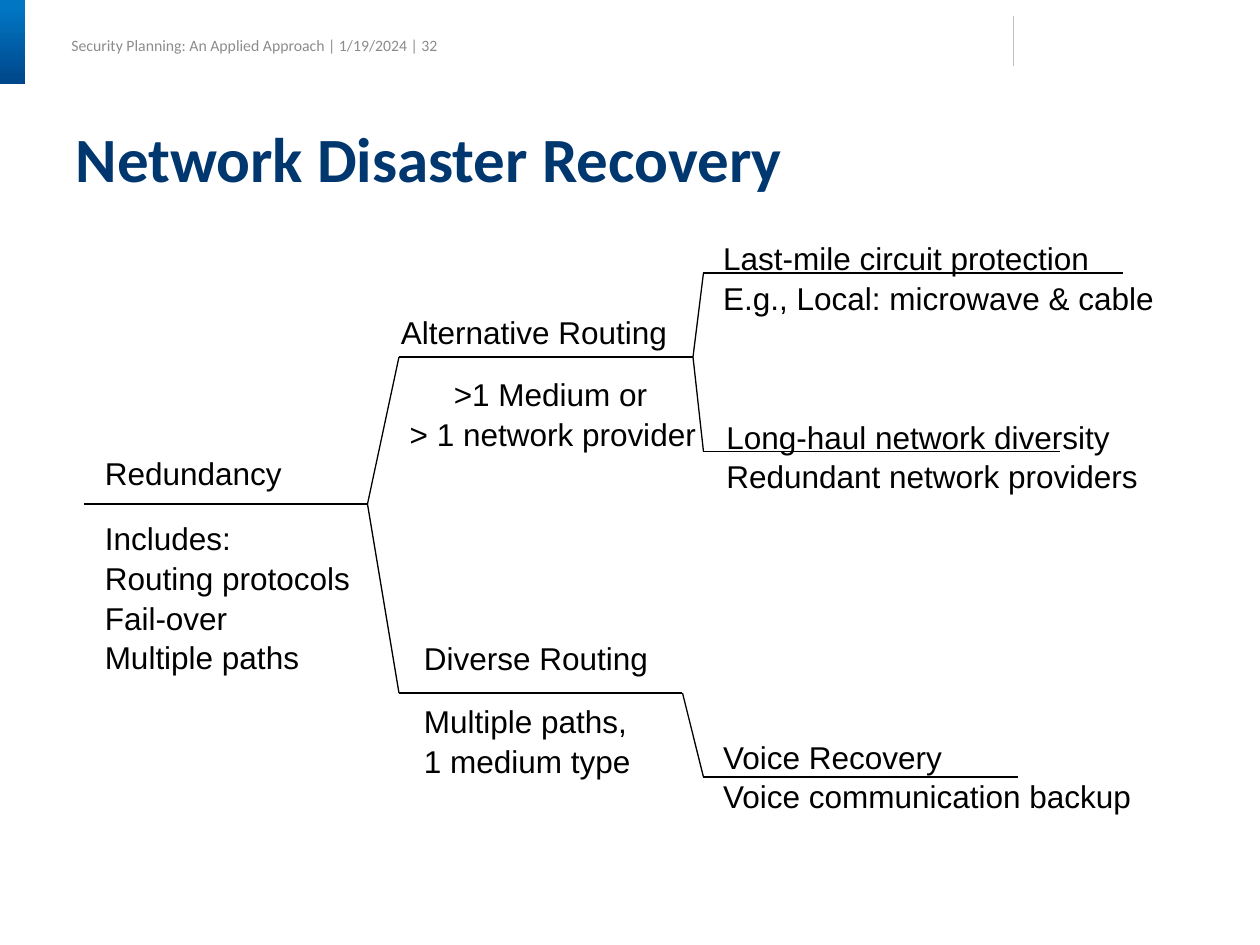
from dataclasses import dataclass

from lxml import etree
from pptx import Presentation
from pptx.dml.color import RGBColor
from pptx.enum.shapes import MSO_CONNECTOR, MSO_SHAPE
from pptx.enum.text import MSO_ANCHOR, PP_ALIGN
from pptx.oxml.ns import qn
from pptx.util import Inches, Pt

STRAIGHT = MSO_CONNECTOR.STRAIGHT
ROUNDED = MSO_SHAPE.ROUNDED_RECTANGLE
MIDDLE = MSO_ANCHOR.MIDDLE
LEFT = PP_ALIGN.LEFT

BLACK = RGBColor(0x00, 0x00, 0x00)
NAVY = RGBColor(0x00, 0x37, 0x6F)
GREY = RGBColor(0x8C, 0x8C, 0x8C)
RULE_GREY = RGBColor(0xBF, 0xBF, 0xBF)
ACCENT_LIGHT = RGBColor(0x01, 0x76, 0xC3)
ACCENT_DARK = RGBColor(0x00, 0x46, 0x8A)

COLUMNS, ROWS = 120, 90
TITLE_ONLY = 5


@dataclass
class Topic:
    heading: str
    details: list
    line: tuple
    box: tuple
    gap: float = 0
    indents: tuple = ()
    parent: str = ""


TOPICS = [
    Topic("Redundancy", ["Includes:", "Routing protocols", "Fail-over", "Multiple paths"],
          (8, 35, 48), (8.8, 42.5, 26, 21.8), gap=14.4),
    Topic("Alternative Routing", [">1 Medium or", "> 1 network provider"],
          (38, 66, 34), (37, 29, 31.5, 14.4), gap=13.2, indents=(0.42, 0.07),
          parent="Redundancy"),
    Topic("Diverse Routing", ["Multiple paths,", "1 medium type"],
          (38, 65, 66), (39.2, 60.1, 25.6, 14.4), gap=13.2, parent="Redundancy"),
    Topic("Last-mile circuit protection", ["E.g., Local: microwave & cable"],
          (67, 107, 26), (67.7, 22, 43.5, 8.4), parent="Alternative Routing"),
    Topic("Long-haul network diversity", ["Redundant network providers"],
          (67, 101, 43), (68, 39, 42.5, 8.4), parent="Alternative Routing"),
    Topic("Voice Recovery", ["Voice communication backup"],
          (67, 97, 74), (67.7, 69.5, 41.5, 8.4), parent="Diverse Routing"),
]


class TreeSlide:
    """Draws a titled topic tree on a grid of 120 columns by 90 rows."""

    def __init__(self, deck):
        self.column = deck.slide_width / COLUMNS
        self.row = deck.slide_height / ROWS
        self.slide = deck.slides.add_slide(deck.slide_layouts[TITLE_ONLY])
        self.shapes = self.slide.shapes

    def place(self, left, top, width, height):
        return (round(left * self.column), round(top * self.row),
                round(width * self.column), round(height * self.row))

    def style(self, paragraph, font, size, color, bold=False):
        paragraph.alignment = LEFT
        paragraph.font.name = font
        paragraph.font.size = Pt(size)
        paragraph.font.color.rgb = color
        paragraph.font.bold = bold

    def title(self, text, *box):
        title = self.shapes.title
        title.left, title.top, title.width, title.height = self.place(*box)
        title.text_frame.text = text
        title.text_frame.vertical_anchor = MIDDLE
        self.style(title.text_frame.paragraphs[0], "Calibri", 36, NAVY, bold=True)

    def header(self, text, *box):
        frame = self.shapes.add_textbox(*self.place(*box)).text_frame
        frame.word_wrap = True
        frame.vertical_anchor = MIDDLE
        frame.margin_left = frame.margin_right = 0
        frame.margin_top = frame.margin_bottom = 0
        frame.text = text
        self.style(frame.paragraphs[0], "Calibri", 9, GREY)

    def accent(self, *box):
        accent = self.shapes.add_shape(ROUNDED, *self.place(*box))
        accent.adjustments[0] = 0
        accent.shadow.inherit = False
        accent.line.fill.background()
        accent.fill.gradient()
        accent.fill.gradient_angle = 270
        stops = accent.fill.gradient_stops
        for stop, position, color in zip(stops, (0.1, 1), (ACCENT_LIGHT, ACCENT_DARK)):
            stop.position = position
            stop.color.rgb = color

    def line(self, start, end, color=BLACK):
        line = self.shapes.add_connector(STRAIGHT, *self.place(*start, *end))
        line.line.color.rgb = color
        line.line.width = Pt(0.75)
        etree.SubElement(line._element.spPr, qn("a:effectLst"))

    def topic(self, topic):
        frame = self.shapes.add_textbox(*self.place(*topic.box)).text_frame
        frame.word_wrap = True
        frame.text = "\n".join([topic.heading, *topic.details])
        heading, *details = frame.paragraphs
        for paragraph in frame.paragraphs:
            paragraph.line_spacing = 1.05
            self.style(paragraph, "Arial", 18, BLACK, bold=paragraph is heading)
        details[0].space_before = Pt(topic.gap)
        for paragraph, indent in zip(details, topic.indents):
            paragraph._p.get_or_add_pPr().set("marL", str(Inches(indent)))

    def tree(self, topics):
        branch_ends = {}
        for topic in topics:
            start, end, row = topic.line
            if topic.parent:
                self.line(branch_ends[topic.parent], (start, row))
            self.line((start, row), (end, row))
            self.topic(topic)
            branch_ends[topic.heading] = (end, row)


def main():
    deck = Presentation()
    deck.slide_width, deck.slide_height = Inches(10), Inches(7.5)
    page = TreeSlide(deck)
    page.header("Security Planning: An Applied Approach | 1/19/2024 | 32", 6.8, 2.9, 40, 2.8)
    page.accent(0, 0, 2.4, 8)
    page.line((96.5, 1.5), (96.5, 6.3), RULE_GREY)
    page.title("Network Disaster Recovery", 6, 6, 108, 18)
    page.tree(TOPICS)
    deck.save("out.pptx")


if __name__ == "__main__":
    main()
